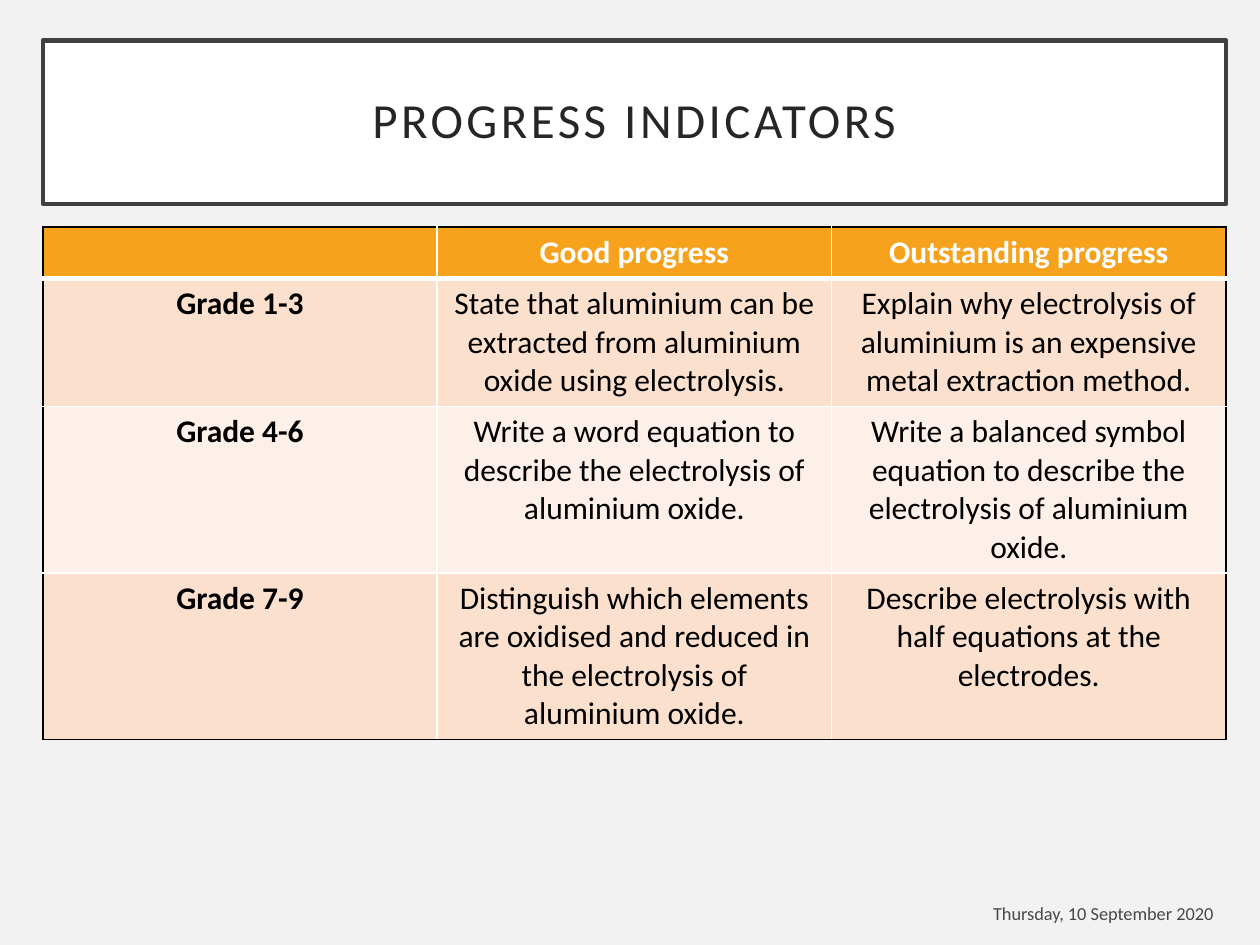
from pptx import Presentation
from pptx.dml.color import RGBColor
from pptx.enum.text import MSO_ANCHOR, MSO_AUTO_SIZE, PP_ALIGN
from pptx.oxml.ns import qn
from pptx.util import Inches, Pt
from lxml import etree

MIDDLE, NO_FIT = MSO_ANCHOR.MIDDLE, MSO_AUTO_SIZE.NONE
CENTER, RIGHT = PP_ALIGN.CENTER, PP_ALIGN.RIGHT

# Content
TITLE = "PROGRESS INDICATORS"
ROWS = [
    ("", "Good progress", "Outstanding progress"),
    ("Grade 1-3",
     "State that aluminium can be extracted from aluminium oxide using electrolysis.",
     "Explain why electrolysis of aluminium is an expensive metal extraction method."),
    ("Grade 4-6",
     "Write a word equation to describe the electrolysis of aluminium oxide.",
     "Write a balanced symbol equation to describe the electrolysis of aluminium oxide."),
    ("Grade 7-9",
     "Distinguish which elements are oxidised and reduced in the electrolysis of aluminium oxide.",
     "Describe electrolysis with half equations at the electrodes."),
]
DATE = "Thursday, 10 September 2020"

# Theme and layout
THEME = {
    "font": "Calibri", "back": "F2F2F2", "white": "FFFFFF", "black": "000000",
    "frame": "404040", "title": "262626", "head": "F6A21D",
    "bands": ("FBE0CD", "FDF0E8"),
    "title_size": 28, "cell_size": 18, "date_size": 10.5,
}
LEFT, WIDTH, TOP = 0.34, 9.39, 1.8
HEIGHTS = (0.41, 1.01, 1.32, 1.32)


def color(name):
    return RGBColor.from_string(THEME.get(name, name))


def paint(fill, name):
    fill.solid()
    fill.fore_color.rgb = color(name)


def write(frame, text, size, tint="black", bold=False, align=CENTER,
          track=None, alpha=None, space=None):
    para = frame.paragraphs[0]
    para.alignment = align
    if space:
        para.line_spacing = space
    run = para.add_run()
    run.text = text
    font = run.font
    font.name, font.size, font.bold = THEME["font"], Pt(THEME[size]), bold
    font.color.rgb = color(tint)
    props = run.font._element
    if track:
        props.set("spc", str(track * 100))
    if alpha:
        tone = props.find(".//" + qn("a:srgbClr"))
        etree.SubElement(tone, qn("a:alpha")).set("val", str(alpha * 1000))


def edge(cell, side, tint, width):
    props = cell._tc.get_or_add_tcPr()
    line = etree.Element(qn("a:ln" + side), w=str(Pt(width)))
    fill = etree.SubElement(line, qn("a:solidFill"))
    etree.SubElement(fill, qn("a:srgbClr"), val=THEME[tint])
    props.insert(len(props) - 1, line)  # borders come before the fill


deck = Presentation()
deck.slide_width, deck.slide_height = Inches(10), Inches(7.5)
slide = deck.slides.add_slide(deck.slide_layouts[5])
paint(slide.background.fill, "back")

# Title in its frame
title = slide.shapes.title
title.left, title.top = Inches(LEFT), Inches(0.32)
title.width, title.height = Inches(WIDTH), Inches(1.3)
paint(title.fill, "white")
title.line.color.rgb = color("frame")
title.line.width = Pt(2.5)
frame = title.text_frame
frame.auto_size, frame.vertical_anchor = NO_FIT, MIDDLE
frame.margin_left = frame.margin_right = Inches(0.2)
frame.margin_top = frame.margin_bottom = Inches(0.2)
write(frame, TITLE, "title_size", tint="title", track=2, space=0.9)

# Progress table: black outside, white inside, thick rule under the header
count = len(ROWS[0])
table = slide.shapes.add_table(
    len(ROWS), count, Inches(LEFT), Inches(TOP),
    Inches(WIDTH), Inches(sum(HEIGHTS))).table
for col in table.columns:
    col.width = Inches(WIDTH / count)
for r, (row, height) in enumerate(zip(ROWS, HEIGHTS)):
    table.rows[r].height = Inches(height)
    head, last = r == 0, r == len(ROWS) - 1
    for c, text in enumerate(row):
        cell = table.cell(r, c)
        paint(cell.fill, "head" if head else THEME["bands"][(r - 1) % 2])
        outer = {"L": c == 0, "R": c == count - 1, "T": head, "B": last}
        for side, out in outer.items():
            thick = (side == "B" and head) or (side == "T" and r == 1)
            edge(cell, side, "black" if out else "white", 3 if thick else 1)
        if text:
            write(cell.text_frame, text, "cell_size", bold=head or c == 0,
                  tint="white" if head else "black")

# Date
box = slide.shapes.add_textbox(Inches(7.47), Inches(7.07), Inches(2.26), Inches(0.35))
frame = box.text_frame
frame.word_wrap, frame.vertical_anchor = True, MIDDLE
write(frame, DATE, "date_size", align=RIGHT, alpha=70)

deck.save("out.pptx")
